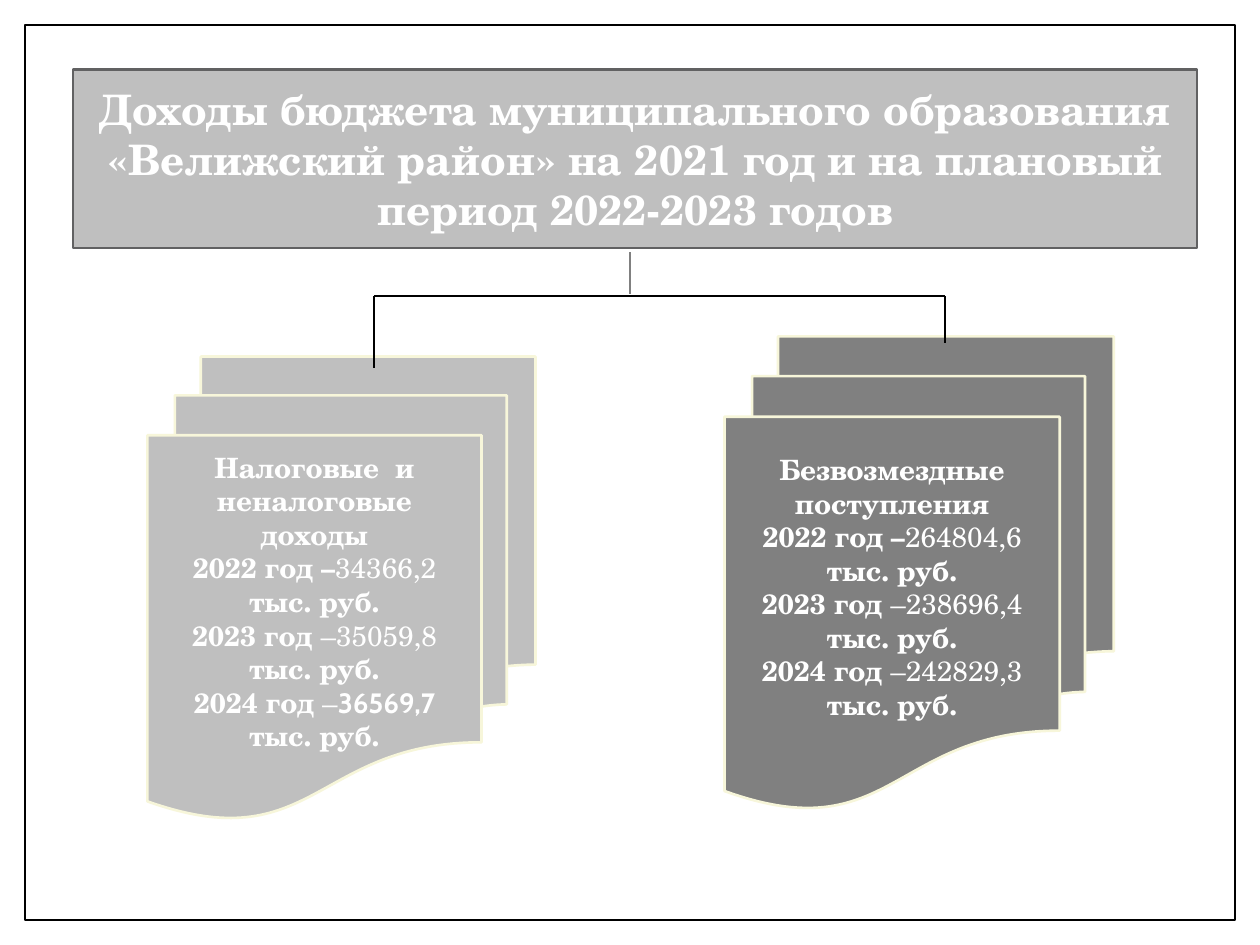
from dataclasses import dataclass

from lxml.etree import SubElement
from pptx import Presentation
from pptx.dml.color import RGBColor
from pptx.enum.shapes import MSO_CONNECTOR, MSO_SHAPE
from pptx.enum.text import MSO_ANCHOR, MSO_AUTO_SIZE, PP_ALIGN
from pptx.oxml.ns import qn
from pptx.util import Inches, Pt


@dataclass(frozen=True)
class Theme:
    font: str = "TeX Gyre Schola"
    number_font: str = "Cabin"
    title_size: float = 24
    body_size: float = 16
    white: str = "FFFFFF"
    black: str = "000000"
    light: str = "BFBFBF"
    dark: str = "808080"
    title_edge: str = "616162"
    paper_edge: str = "F7F6DA"
    edge_width: float = 1.5
    connector_width: float = 0.79


THEME = Theme()
UNIT = "тыс. руб."
REGULAR = {"bold": False}

TITLE = ("Доходы бюджета муниципального образования «Велижский район» "
         "на 2021 год и на плановый период 2022-2023 годов")
TITLE_BOX = (0.58, 0.55, 8.92, 1.42)

# Each paragraph is a list of (text, format) runs.
TAX_BOX = (1.17, 2.83, 3.08, 3.67)
TAX_INCOME = [
    [("Налоговые  и неналоговые доходы", {})],
    [("2022 год –", {}), ("34366,2", REGULAR)],
    [(UNIT, {})],
    [("2023 год ", {}), ("–35059,8 ", REGULAR), (UNIT, {})],
    [("2024 год ", {}), ("–", REGULAR),
     ("36569,7 ", {"font": THEME.number_font}), (UNIT, {})],
]
GRANT_BOX = (5.75, 2.67, 3.09, 3.75)
GRANTS = [
    [("Безвозмездные поступления", {})],
    [("2022 год –", {}), ("264804,6 ", REGULAR), (UNIT, {})],
    [("2023 год ", {}), ("–238696,4 ", REGULAR), (UNIT, {})],
    [("2024 год ", {}), ("–242829,3 ", REGULAR), (UNIT, {})],
]


def color(value):
    return RGBColor.from_string(value)


def inches(values):
    return [Inches(value) for value in values]


def add_run(paragraph, text, size=THEME.body_size, bold=True,
            font=THEME.font, text_color=THEME.white):
    run = paragraph.add_run()
    run.text = text
    run.font.name = font
    run.font.size = Pt(size)
    run.font.bold = bold
    run.font.color.rgb = color(text_color)


def write_paragraphs(shape, paragraphs, **common):
    """Fill the shape with centred paragraphs made of formatted runs."""
    frame = shape.text_frame
    frame.word_wrap = True
    frame.auto_size = MSO_AUTO_SIZE.NONE
    frame.vertical_anchor = MSO_ANCHOR.MIDDLE
    for index, runs in enumerate(paragraphs):
        paragraph = frame.add_paragraph() if index else frame.paragraphs[0]
        paragraph.alignment = PP_ALIGN.CENTER
        for text, run_format in runs:
            add_run(paragraph, text, **{**common, **run_format})


def paint(shape, fill, line, width=THEME.edge_width):
    shape.fill.solid()
    shape.fill.fore_color.rgb = color(fill)
    shape.line.color.rgb = color(line)
    shape.line.width = Pt(width)


def add_shape(slide, kind, box, fill, line, width=THEME.edge_width):
    shape = slide.shapes.add_shape(kind, *inches(box))
    shape.shadow.inherit = False
    paint(shape, fill, line, width)
    return shape


def add_frame(slide, presentation, margin=0.2):
    """Draw the page border behind everything else."""
    width = presentation.slide_width.inches - 2 * margin
    height = presentation.slide_height.inches - 2 * margin
    frame = add_shape(slide, MSO_SHAPE.RECTANGLE,
                      (margin, margin, width, height),
                      THEME.white, THEME.black, 1)
    slide.shapes.title.element.addprevious(frame.element)


def add_title(slide, box):
    """Turn the title placeholder into a rounded banner."""
    title = slide.shapes.title
    title.left, title.top, title.width, title.height = inches(box)
    geometry = SubElement(title.element.spPr, qn("a:prstGeom"),
                          prst="roundRect")
    SubElement(geometry, qn("a:avLst"))
    paint(title, THEME.light, THEME.title_edge)
    write_paragraphs(title, [[(TITLE, {})]], size=THEME.title_size)


def add_document_stack(slide, box, fill, paragraphs):
    stack = add_shape(slide, MSO_SHAPE.FLOWCHART_MULTIDOCUMENT, box,
                      fill, THEME.paper_edge)
    write_paragraphs(stack, paragraphs)
    stack.text_frame.margin_bottom = Inches(0.32)


def add_line(slide, start, end, line_color=THEME.black):
    line = slide.shapes.add_connector(MSO_CONNECTOR.STRAIGHT,
                                      *inches(start + end))
    line.line.color.rgb = color(line_color)
    line.line.width = Pt(THEME.connector_width)
    SubElement(line.element.spPr, qn("a:effectLst"))


def add_tree(slide, trunk, branches, top=2.0, bar=2.35):
    """Join the banner to the stacks; branches are (x, bottom) pairs."""
    add_line(slide, (branches[0][0], bar), (branches[-1][0], bar))
    for x, bottom in branches:
        add_line(slide, (x, bar), (x, bottom))
    add_line(slide, (trunk, top), (trunk, bar - 0.02), THEME.dark)


def main():
    presentation = Presentation()
    presentation.slide_width = Inches(10)
    presentation.slide_height = Inches(7.5)
    slide = presentation.slides.add_slide(presentation.slide_layouts[5])
    add_frame(slide, presentation)
    add_title(slide, TITLE_BOX)
    add_document_stack(slide, GRANT_BOX, THEME.dark, GRANTS)
    add_document_stack(slide, TAX_BOX, THEME.light, TAX_INCOME)
    add_tree(slide, trunk=5, branches=[(2.97, 2.92), (7.5, 2.72)])
    presentation.save("out.pptx")


if __name__ == "__main__":
    main()
